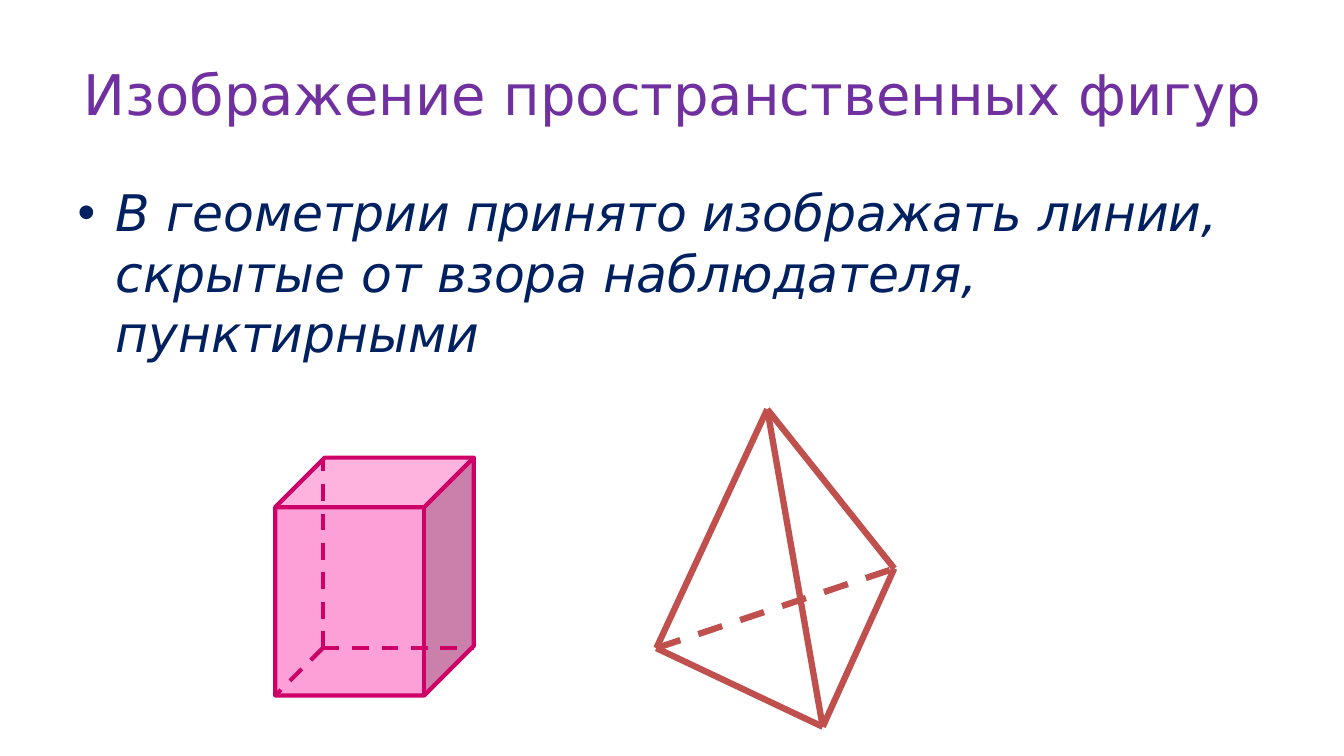
from typing import NamedTuple

from lxml.etree import SubElement
from pptx import Presentation
from pptx.dml.color import RGBColor
from pptx.enum.dml import MSO_LINE_DASH_STYLE as Dash
from pptx.enum.shapes import MSO_CONNECTOR as Connector, MSO_SHAPE as Shape
from pptx.enum.text import MSO_ANCHOR as Anchor, MSO_AUTO_SIZE as AutoSize, PP_ALIGN as Align
from pptx.oxml.ns import qn
from pptx.util import Emu, Pt

EMU_PER_PX = 9144  # 100 px to the inch
FONT = "DejaVu Sans"
COLORS = {
    "title": "7030A0",
    "body": "002060",
    "cube_fill": "FEA0D8",
    "cube_line": "CC0066",
    "pyramid": "C0504D",
}


class Point(NamedTuple):
    x: int
    y: int


class Box(NamedTuple):
    left: int
    top: int
    width: int
    height: int


class Edge(NamedTuple):
    start: Point
    end: Point
    hidden: bool = False


def px(value: int) -> Emu:
    return Emu(value * EMU_PER_PX)


def color(name: str) -> RGBColor:
    return RGBColor.from_string(COLORS[name])


def fill_placeholder(placeholder, box: Box, text: str, size: int, color_name: str,
                     italic: bool = False):
    placeholder.left, placeholder.top, placeholder.width, placeholder.height = map(px, box)
    frame = placeholder.text_frame
    frame.text = text
    frame.auto_size = AutoSize.NONE
    font = frame.paragraphs[0].runs[0].font
    font.name, font.size, font.italic = FONT, Pt(size), italic
    font.color.rgb = color(color_name)
    return frame


def draw_edges(slide, edges: list[Edge], color_name: str, width: float) -> None:
    group = slide.shapes.add_group_shape()
    for edge in edges:
        line = group.shapes.add_connector(
            Connector.STRAIGHT, *map(px, edge.start), *map(px, edge.end))
        line.line.color.rgb = color(color_name)
        line.line.width = Pt(width)
        if edge.hidden:
            line.line.dash_style = Dash.DASH
        SubElement(line._element.spPr, qn("a:effectLst"))


def draw_cube(slide, box: Box) -> None:
    cube = slide.shapes.add_shape(Shape.CUBE, *map(px, box))
    cube.adjustments[0] = 0.25
    cube.shadow.inherit = False
    cube.fill.solid()
    cube.fill.fore_color.rgb = color("cube_fill")
    cube.line.color.rgb = color("cube_line")
    cube.line.width = Pt(3)

    # Hidden edges meet at the far lower corner
    right, bottom = box.left + box.width, box.top + box.height
    depth = 47
    corner = Point(box.left + depth, bottom - depth)
    ends = [Point(right, corner.y), Point(box.left, bottom), Point(corner.x, box.top)]
    draw_edges(slide, [Edge(corner, end, hidden=True) for end in ends], "cube_line", 3)


def draw_pyramid(slide) -> None:
    apex, left = Point(761, 406), Point(651, 643)
    right, front = Point(887, 564), Point(816, 721)
    edges = [
        Edge(apex, front),
        Edge(apex, right),
        Edge(right, front),
        Edge(left, right, hidden=True),
        Edge(left, front),
        Edge(apex, left),
    ]
    draw_edges(slide, edges, "pyramid", 4.5)


def main() -> None:
    presentation = Presentation()
    presentation.slide_width, presentation.slide_height = px(1333), px(750)
    slide = presentation.slides.add_slide(presentation.slide_layouts[1])

    # Title and rule
    title = fill_placeholder(slide.shapes.title, Box(67, 30, 1200, 125),
                             "Изображение пространственных фигур", 40, "title")
    title.vertical_anchor = Anchor.MIDDLE
    title.paragraphs[0].alignment = Align.CENTER
    fill_placeholder(
        slide.placeholders[1], Box(67, 175, 1200, 495),
        "В геометрии принято изображать линии, скрытые от взора наблюдателя, пунктирными",
        36, "body", italic=True)

    # Solids
    draw_cube(slide, Box(273, 454, 197, 236))
    draw_pyramid(slide)

    presentation.save("out.pptx")


if __name__ == "__main__":
    main()
